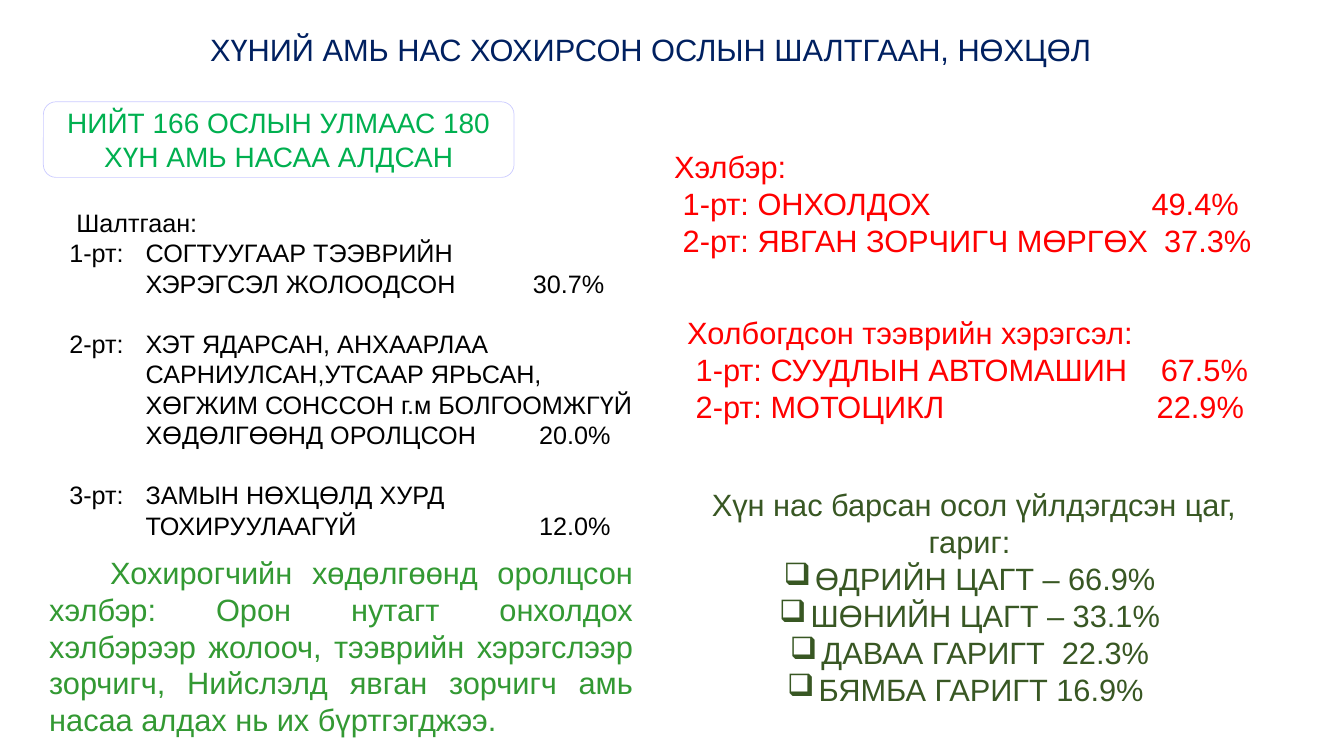
from dataclasses import dataclass

from lxml import etree
from pptx import Presentation
from pptx.dml.color import RGBColor
from pptx.enum.shapes import MSO_SHAPE
from pptx.enum.text import MSO_ANCHOR, MSO_AUTO_SIZE, PP_ALIGN
from pptx.oxml.ns import qn
from pptx.util import Pt

RECTANGLE = MSO_SHAPE.RECTANGLE
ROUNDED = MSO_SHAPE.ROUNDED_RECTANGLE
MIDDLE, TOP = MSO_ANCHOR.MIDDLE, MSO_ANCHOR.TOP
GROW, FIXED = MSO_AUTO_SIZE.SHAPE_TO_FIT_TEXT, MSO_AUTO_SIZE.NONE
LEFT, CENTER, JUSTIFY = PP_ALIGN.LEFT, PP_ALIGN.CENTER, PP_ALIGN.JUSTIFY


@dataclass(frozen=True)
class Theme:
    font: str = "Arial"
    navy: str = "002060"
    green: str = "00B050"
    leaf: str = "339933"
    olive: str = "385723"
    red: str = "FF0000"
    black: str = "000000"
    white: str = "FFFFFF"
    lilac: str = "CCCCFF"
    body: float = 22
    banner: float = 20
    small: float = 18


@dataclass(frozen=True)
class Line:
    text: str
    tabs: tuple = ()
    before: float = 0
    margin: float = 0
    first: float = 0
    bullet: str = ""


class SlideBuilder:
    def __init__(self, slide, theme):
        self.slide = slide
        self.theme = theme

    def format_line(self, paragraph, line):
        properties = paragraph._p.get_or_add_pPr()
        if line.margin or line.first:
            properties.set("marL", str(Pt(line.margin)))
            properties.set("indent", str(Pt(line.first)))
        if line.bullet:
            etree.SubElement(properties, qn("a:buChar"), char=line.bullet)
        if line.tabs:
            stops = etree.SubElement(properties, qn("a:tabLst"))
            for position in line.tabs:
                etree.SubElement(stops, qn("a:tab"), pos=str(Pt(position)), algn="l")
        if line.before:
            paragraph.space_before = Pt(line.before)

    def fill_text(self, shape, lines, color, size, align, anchor, fit, spacing):
        frame = shape.text_frame
        frame.word_wrap = True
        frame.auto_size = fit
        frame.vertical_anchor = anchor
        for index, line in enumerate(lines):
            paragraph = frame.add_paragraph() if index else frame.paragraphs[0]
            paragraph.text = line.text
            self.format_line(paragraph, line)
            paragraph.alignment = align
            paragraph.line_spacing = spacing
            paragraph.font.name = self.theme.font
            paragraph.font.size = Pt(size)
            paragraph.font.color.rgb = RGBColor.from_string(color)

    def text(self, box, lines, color, size, align=LEFT, anchor=TOP, fit=GROW, spacing=1.0):
        shape = self.slide.shapes.add_textbox(*map(Pt, box))
        self.fill_text(shape, lines, color, size, align, anchor, fit, spacing)

    def panel(self, box, lines, color, size, kind=RECTANGLE, border=None,
              align=LEFT, anchor=TOP, fit=GROW):
        shape = self.slide.shapes.add_shape(kind, *map(Pt, box))
        shape.shadow.inherit = False
        shape.fill.solid()
        shape.fill.fore_color.rgb = RGBColor.from_string(self.theme.white)
        if border:
            shape.line.color.rgb = RGBColor.from_string(border)
            shape.line.width = Pt(0.5)
        else:
            shape.line.fill.background()
        self.fill_text(shape, lines, color, size, align, anchor, fit, 1.0)


def main():
    presentation = Presentation()
    presentation.slide_width = Pt(960)
    presentation.slide_height = Pt(540)
    slide = presentation.slides.add_slide(presentation.slide_layouts[6])
    theme = Theme()
    builder = SlideBuilder(slide, theme)

    builder.text(
        (126.7, 17.3, 676, 39.6),
        [Line("ХҮНИЙ АМЬ НАС ХОХИРСОН ОСЛЫН ШАЛТГААН, НӨХЦӨЛ")],
        theme.navy, theme.body, CENTER, MIDDLE, FIXED, 0.9)

    builder.panel(
        (31, 72.7, 336.2, 54),
        [Line("НИЙТ 166 ОСЛЫН УЛМААС 180 ХҮН АМЬ НАСАА АЛДСАН")],
        theme.green, theme.banner, ROUNDED, theme.lilac, CENTER, MIDDLE, FIXED)

    builder.text(
        (28.1, 391.7, 431.3, 140.4),
        [Line("Хохирогчийн хөдөлгөөнд оролцсон хэлбэр: Орон нутагт онхолдох "
              "хэлбэрээр жолооч, тээврийн хэрэгслээр зорчигч, Нийслэлд явган "
              "зорчигч амь насаа алдах нь их бүртгэгджээ.", first=43.5)],
        theme.leaf, theme.body, JUSTIFY)

    builder.panel(
        (474.5, 102.2, 437, 87.1),
        [Line("Хэлбэр:"),
         Line(" 1-рт: ОНХОЛДОХ\t49.4%", (341,)),
         Line(" 2-рт: ЯВГАН ЗОРЧИГЧ МӨРГӨХ\t37.3%", (350,))],
        theme.red, theme.body)

    times = ["ӨДРИЙН ЦАГТ – 66.9%", "ШӨНИЙН ЦАГТ – 33.1%",
             "ДАВАА ГАРИГТ  22.3%", "БЯМБА ГАРИГТ 16.9% "]
    builder.text(
        (483.8, 343.4, 417.6, 167),
        [Line(" Хүн нас барсан осол үйлдэгдсэн цаг, гариг:")]
        + [Line(time, margin=22.5, first=-22.5, bullet="❑") for time in times],
        theme.olive, theme.body, CENTER)

    cause_tabs = (54.5, 331)
    wide_tabs = (54.5, 335.5)
    gap = 21.6
    builder.panel(
        (42.5, 144.7, 417.6, 247),
        [Line(" Шалтгаан:"),
         Line("1-рт:\tСОГТУУГААР ТЭЭВРИЙН", cause_tabs),
         Line("\tХЭРЭГСЭЛ ЖОЛООДСОН\t30.7%", cause_tabs),
         Line("2-рт:\tХЭТ ЯДАРСАН, АНХААРЛАА", wide_tabs, gap),
         Line("\tСАРНИУЛСАН,УТСААР ЯРЬСАН,", wide_tabs),
         Line("\tХӨГЖИМ СОНССОН г.м БОЛГООМЖГҮЙ", wide_tabs),
         Line("\tХӨДӨЛГӨӨНД ОРОЛЦСОН\t20.0%", wide_tabs),
         Line("3-рт:\tЗАМЫН НӨХЦӨЛД ХУРД", wide_tabs, gap),
         Line("\tТОХИРУУЛААГҮЙ\t12.0%", wide_tabs)],
        theme.black, theme.small)

    builder.panel(
        (483.8, 220.3, 456.5, 87.1),
        [Line("Холбогдсон тээврийн хэрэгсэл:"),
         Line(" 1-рт: СУУДЛЫН АВТОМАШИН\t67.5%", (338.3,)),
         Line(" 2-рт: МОТОЦИКЛ\t22.9%", (335.4,))],
        theme.red, theme.body)

    presentation.save("out.pptx")


if __name__ == "__main__":
    main()
